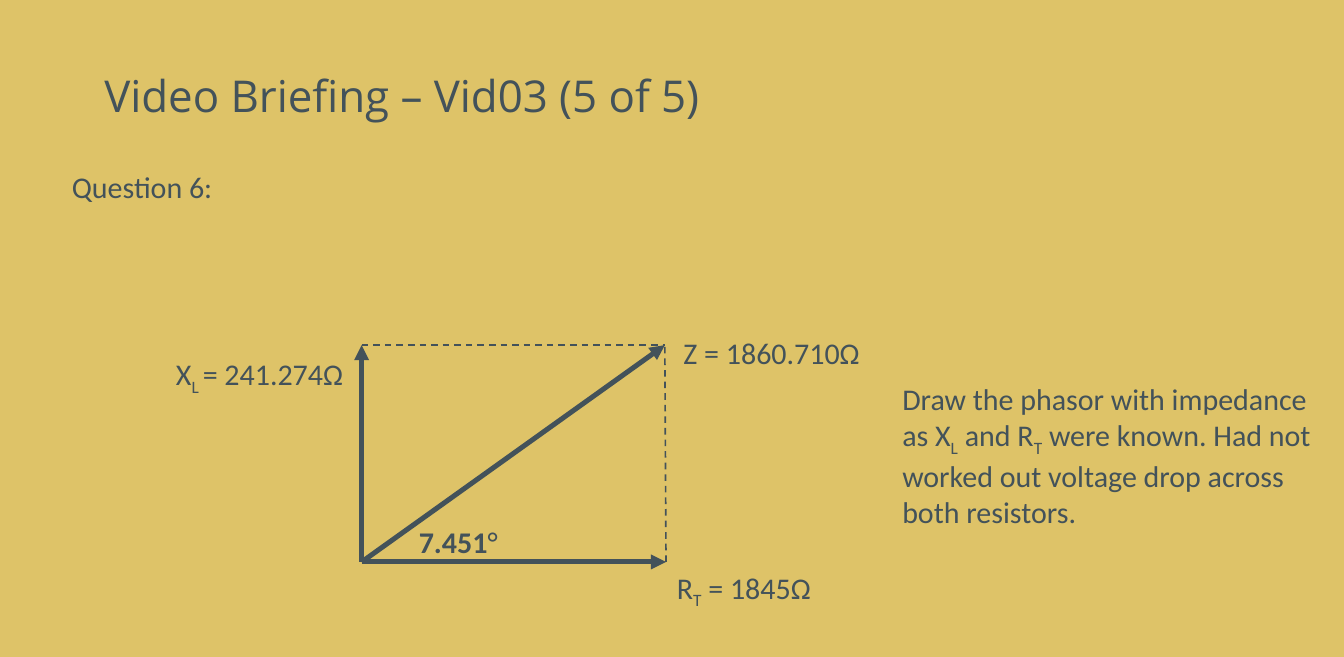
from lxml import etree
from pptx import Presentation
from pptx import util as u
from pptx.dml.color import RGBColor
from pptx.enum import dml, shapes, text
from pptx.oxml import ns

SAND, SLATE = "DEC368", "43525A"
SLIDE_SIZE = 806.4, 394

TITLE = "Video Briefing – Vid03 (5 of 5)"
TITLE_BOX = 55.4, 20.9, 695.5, 76.3

# Phasor rectangle: resistance runs right, reactance runs up
LEFT, TOP, BOTTOM = 217, 207, 337
ORIGIN, RT_TIP = (LEFT, BOTTOM), (399.6, BOTTOM)
XL_TIP, Z_TIP = (LEFT, TOP), (398.9, TOP)
PHASORS = [(ORIGIN, XL_TIP), (ORIGIN, RT_TIP), (ORIGIN, Z_TIP)]
PROJECTIONS = [(XL_TIP, Z_TIP), (RT_TIP, Z_TIP)]

# Each text: box, wraps, runs of (words, style)
TEXTS = [
    ((36, 97.2, 759.6, 29), True, [("Question 6:", "")]),
    ((399, 337.9, 99.4, 29), False,
     [("R", ""), ("T", "sub"), (" = 1845Ω", "")]),
    ((98.5, 209.8, 117.4, 29), False,
     [("X", ""), ("L ", "sub"), ("= 241.274Ω", "")]),
    ((403, 197.3, 122.4, 29), False, [("Z = 1860.710Ω", "")]),
    ((244.2, 310.5, 62.6, 29), False, [("7.451", "bold"), ("°", "")]),
    ((534.3, 224.9, 261.4, 94.3), True,
     [("Draw the phasor with impedance as X", ""), ("L", "sub"),
      (" and R", ""), ("T", "sub"),
      (" were known. Had not worked out voltage drop across both resistors.",
       "")]),
]


def color(hex_string):
    return RGBColor.from_string(hex_string)


def points(values):
    return [u.Pt(v) for v in values]


def set_font(font, name, size):
    font.name, font.size = name, u.Pt(size)
    font.color.rgb = color(SLATE)


def add_title(slide):
    sp = slide.shapes.title
    sp.left, sp.top, sp.width, sp.height = points(TITLE_BOX)
    tf = sp.text_frame
    tf.text = TITLE
    tf.auto_size = text.MSO_AUTO_SIZE.NONE
    tf.vertical_anchor = text.MSO_ANCHOR.MIDDLE
    p = tf.paragraphs[0]
    p.alignment = text.PP_ALIGN.LEFT
    p.line_spacing = 0.9
    set_font(p.font, "Open Sans", 26.3)


def add_text(slide, box, wraps, runs):
    tf = slide.shapes.add_textbox(*points(box)).text_frame
    tf.word_wrap = wraps
    tf.auto_size = text.MSO_AUTO_SIZE.SHAPE_TO_FIT_TEXT
    p = tf.paragraphs[0]
    set_font(p.font, "Calibri", 18)
    for words, style in runs:
        r = p.add_run()
        r.text = words
        if style == "bold":
            r.font.bold = True
        elif style == "sub":
            r._r.get_or_add_rPr().set("baseline", "-25000")


def add_line(slide, start, end, width):
    c = slide.shapes.add_connector(
        shapes.MSO_CONNECTOR.STRAIGHT, *points(start + end))
    c.line.color.rgb = color(SLATE)
    c.line.width = u.Pt(width)
    etree.SubElement(c._element.spPr, ns.qn("a:effectLst"))
    return c.line


def add_phasor(slide, start, end):
    line = add_line(slide, start, end, 3)
    etree.SubElement(line._get_or_add_ln(), ns.qn("a:tailEnd"),
                     type="triangle")


def add_projection(slide, start, end):
    add_line(slide, start, end, 1).dash_style = dml.MSO_LINE.DASH


def main():
    prs = Presentation()
    prs.slide_width, prs.slide_height = points(SLIDE_SIZE)
    slide = prs.slides.add_slide(prs.slide_layouts.get_by_name("Title Only"))
    fill = slide.background.fill
    fill.solid()
    fill.fore_color.rgb = color(SAND)

    add_title(slide)
    for start, end in PROJECTIONS:
        add_projection(slide, start, end)
    for start, end in PHASORS:
        add_phasor(slide, start, end)
    for box, wraps, runs in TEXTS:
        add_text(slide, box, wraps, runs)
    prs.save("out.pptx")


if __name__ == "__main__":
    main()
